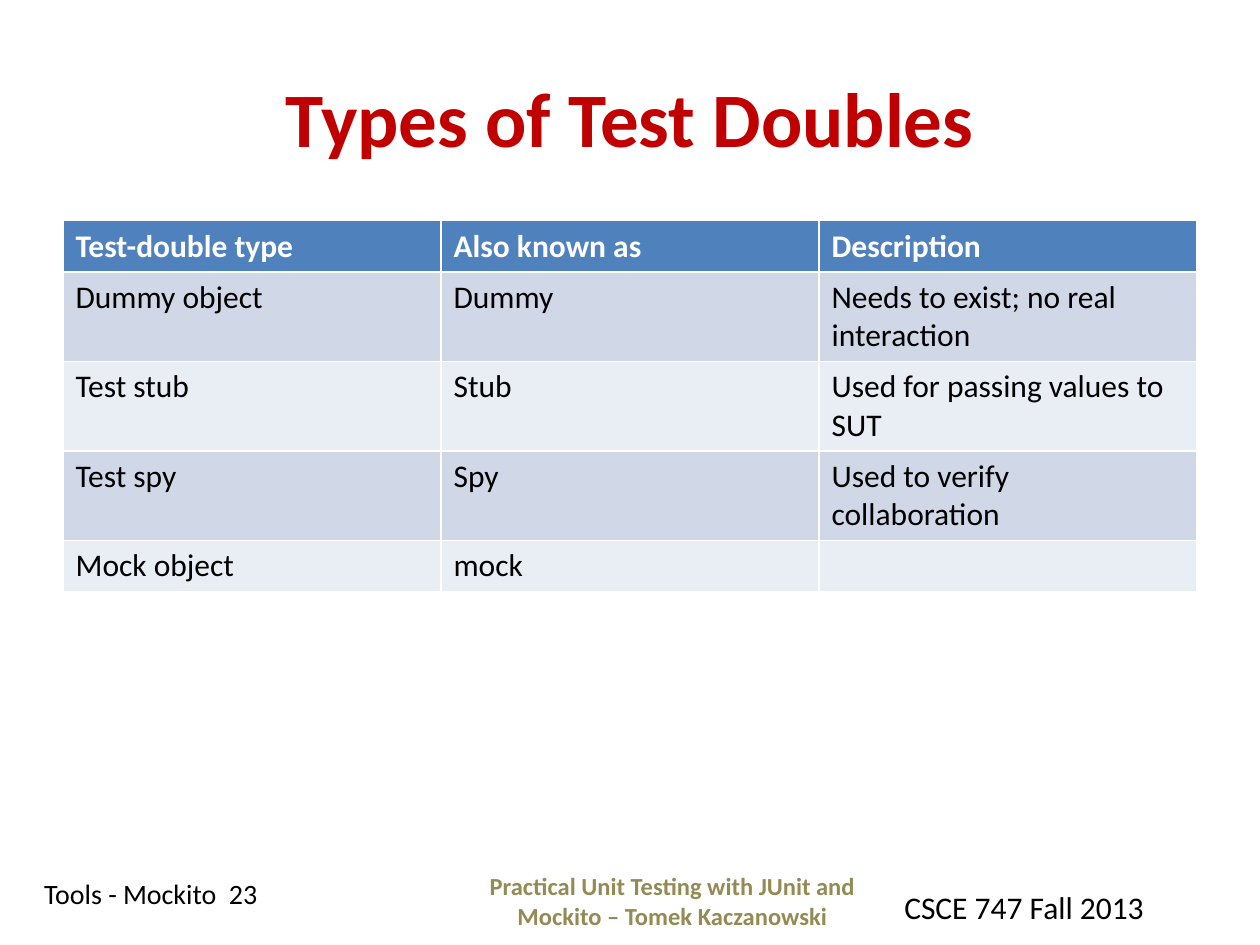
from pptx import Presentation
from pptx.dml.color import RGBColor
from pptx.enum.text import MSO_ANCHOR, PP_ALIGN
from pptx.util import Cm, Pt

LEFT, MID = PP_ALIGN.LEFT, PP_ALIGN.CENTER
TOP, CENTER = MSO_ANCHOR.TOP, MSO_ANCHOR.MIDDLE
FONT = "Calibri"
HUES = {
    "title": "C00000", "text": "000000", "source": "948A54",
    "head": "4F81BD", "white": "FFFFFF", "odd": "D0D8E8", "even": "E9EDF4",
}

ROWS = [
    ("Test-double type", "Also known as", "Description"),
    ("Dummy object", "Dummy", "Needs to exist; no real interaction"),
    ("Test stub", "Stub", "Used for passing values to SUT"),
    ("Test spy", "Spy", "Used to verify collaboration"),
    ("Mock object", "mock", ""),
]
LABELS = [
    ("Tools - Mockito  23", (0.64, 17.55, 4.95, 0.94),
     16, "text", False, LEFT, TOP, False),
    ("CSCE 747 Fall 2013", (17.98, 17.78, 5.41, 1.02),
     18, "text", False, LEFT, TOP, False),
    ("Types of Test Doubles", (1.27, 0.76, 22.86, 3.18),
     44, "title", True, MID, CENTER, True),
    ("Practical Unit Testing with JUnit and Mockito – Tomek Kaczanowski",
     (9.53, 17.65, 8.05, 1.02), 14, "source", True, MID, CENTER, True),
]


def color(name):
    return RGBColor.from_string(HUES[name])


def style(para, size, hue, bold):
    font = para.font
    font.name, font.size, font.bold = FONT, Pt(size), bold
    font.color.rgb = color(hue)


def label(slide, text, place, size, hue, bold, align, anchor, wrap):
    frame = slide.shapes.add_textbox(*map(Cm, place)).text_frame
    frame.word_wrap = wrap
    frame.vertical_anchor = anchor
    para = frame.paragraphs[0]
    para.text, para.alignment = text, align
    style(para, size, hue, bold)


def grid(slide):
    size = len(ROWS), len(ROWS[0])
    place = map(Cm, (1.27, 4.45, 22.86, 1.03 * len(ROWS)))
    table = slide.shapes.add_table(*size, *place).table
    for r, row in enumerate(ROWS):
        head = r == 0
        fill = "head" if head else ("even", "odd")[r % 2]
        for c, text in enumerate(row):
            cell = table.cell(r, c)
            cell.fill.solid()
            cell.fill.fore_color.rgb = color(fill)
            cell.text = text
            style(cell.text_frame.paragraphs[0], 18,
                  "white" if head else "text", head)


def main():
    deck = Presentation()
    deck.slide_width, deck.slide_height = Cm(25.4), Cm(19.05)
    slide = deck.slides.add_slide(deck.slide_layouts[6])
    grid(slide)
    for item in LABELS:
        label(slide, *item)
    deck.save("out.pptx")


if __name__ == "__main__":
    main()
